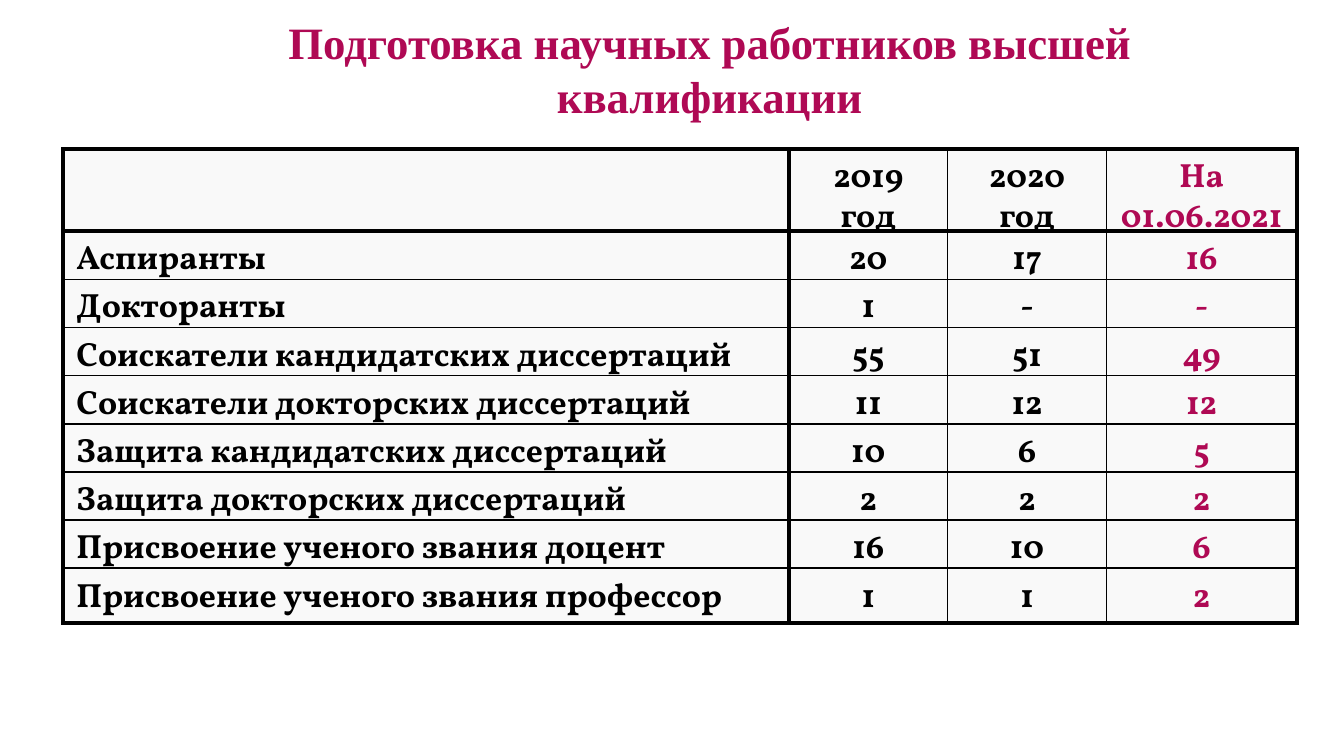
from dataclasses import dataclass

from lxml import etree
from pptx import Presentation
from pptx import util as u
from pptx.dml.color import RGBColor
from pptx.enum import text
from pptx.oxml.ns import qn


@dataclass(frozen=True)
class Theme:
    accent: str = "AF0954"
    ink: str = "000000"
    cell_fill: str = "F2F2F2"
    cell_opacity: int = 40
    title_font: str = "Times New Roman"
    table_font: str = "Vollkorn"
    title_size: int = 24
    table_size: int = 18
    thin: float = 1
    thick: float = 2.25


HEADER = ["", "2019\nгод", "2020\nгод", "На\n01.06.2021"]
ROWS = [
    ["Аспиранты", "20", "17", "16"],
    ["Докторанты", "1", "-", "-"],
    ["Соискатели кандидатских диссертаций", "55", "51", "49"],
    ["Соискатели докторских диссертаций", "11", "12", "12"],
    ["Защита кандидатских диссертаций", "10", "6", "5"],
    ["Защита докторских диссертаций", "2", "2", "2"],
    ["Присвоение ученого звания доцент", "16", "10", "6"],
    ["Присвоение ученого звания профессор", "1", "1", "2"],
]
COL_WIDTHS = [13.72, 3.0, 3.0, 3.6]
ROW_HEIGHTS = [1.55] + [0.91] * 7 + [1.04]


class SlideBuilder:
    def __init__(self, slide, theme):
        self.s = slide
        self.theme = theme

    def fill_text(self, tf, content, font, size, color, **para_format):
        """Fill a text frame, one paragraph per line of content."""
        for i, line in enumerate(content.split("\n")):
            p = tf.paragraphs[0] if i == 0 else tf.add_paragraph()
            for name, value in para_format.items():
                setattr(p, name, value)
            # An empty cell keeps its type size through the paragraph font
            target = p.font
            if line:
                r = p.add_run()
                r.text = line
                target = r.font
            for name, value in {"name": font, "size": u.Pt(size), "bold": True}.items():
                setattr(target, name, value)
            target.color.rgb = RGBColor.from_string(color)

    def title(self, content, left, top, width, height):
        sp = self.s.shapes.add_textbox(*map(u.Cm, (left, top, width, height)))
        tf = sp.text_frame
        tf.word_wrap = True
        tf.auto_size = text.MSO_AUTO_SIZE.SHAPE_TO_FIT_TEXT
        t = self.theme
        self.fill_text(tf, content, t.title_font, t.title_size, t.accent,
                       alignment=text.PP_ALIGN.CENTER)

    def borders(self, cell, widths):
        tc_pr = cell._tc.get_or_add_tcPr()
        for i, (side, width) in enumerate(widths.items()):
            ln = etree.Element(qn(f"a:ln{side}"), w=str(u.Pt(width)))
            fill = etree.SubElement(ln, qn("a:solidFill"))
            etree.SubElement(fill, qn("a:srgbClr"), val=self.theme.ink)
            tc_pr.insert(i, ln)

    def cell_fill(self, cell):
        cell.fill.solid()
        cell.fill.fore_color.rgb = RGBColor.from_string(self.theme.cell_fill)
        clr = cell._tc.tcPr.find(".//" + qn("a:srgbClr"))
        etree.SubElement(clr, qn("a:alpha"), val=str(self.theme.cell_opacity * 1000))

    def cell(self, cell, content, row, col, last_row, last_col):
        t = self.theme
        para_format = {"line_spacing": 0.85, "alignment": text.PP_ALIGN.CENTER}
        if row > 0:
            cell.vertical_anchor = text.MSO_ANCHOR.MIDDLE
            para_format.update(space_before=u.Pt(3), space_after=u.Pt(3))
            if col == 0:
                para_format["alignment"] = text.PP_ALIGN.LEFT
        color = t.accent if col == last_col else t.ink
        self.fill_text(cell.text_frame, content, t.table_font, t.table_size, color,
                       **para_format)

        # Hanging indent for the row labels
        if row > 0 and col == 0:
            p_pr = cell.text_frame.paragraphs[0]._p.get_or_add_pPr()
            p_pr.set("marL", str(u.Cm(0.97)))
            p_pr.set("indent", str(-u.Cm(0.97)))

        # Thick lines frame the table, the header and the label column
        thick = {
            "L": col <= 1,
            "R": col in (0, last_col),
            "T": row <= 1,
            "B": row in (0, last_row),
        }
        self.cell_fill(cell)
        self.borders(cell, {side: t.thick if on else t.thin for side, on in thick.items()})

    def table(self, data, left, top, col_widths, row_heights):
        size = (left, top, sum(col_widths), sum(row_heights))
        frame = self.s.shapes.add_table(len(data), len(data[0]), *map(u.Cm, size))
        tbl = frame.table
        for name in ("first_row", "horz_banding"):
            setattr(tbl, name, False)
        for column, width in zip(tbl.columns, col_widths):
            column.width = u.Cm(width)
        for row, height in zip(tbl.rows, row_heights):
            row.height = u.Cm(height)
        for i, values in enumerate(data):
            for j, value in enumerate(values):
                self.cell(tbl.cell(i, j), value, i, j, len(data) - 1, len(values) - 1)


def main():
    prs = Presentation()
    prs.slide_width, prs.slide_height = u.Cm(25.4), u.Cm(14.29)
    builder = SlideBuilder(prs.slides.add_slide(prs.slide_layouts[6]), Theme())

    # Heading
    builder.title("Подготовка научных работников высшей квалификации", 2.31, 0.15, 22.2, 2.31)

    # Staff training figures by year
    builder.table([HEADER] + ROWS, 1.19, 2.82, COL_WIDTHS, ROW_HEIGHTS)

    prs.save("out.pptx")


if __name__ == "__main__":
    main()
